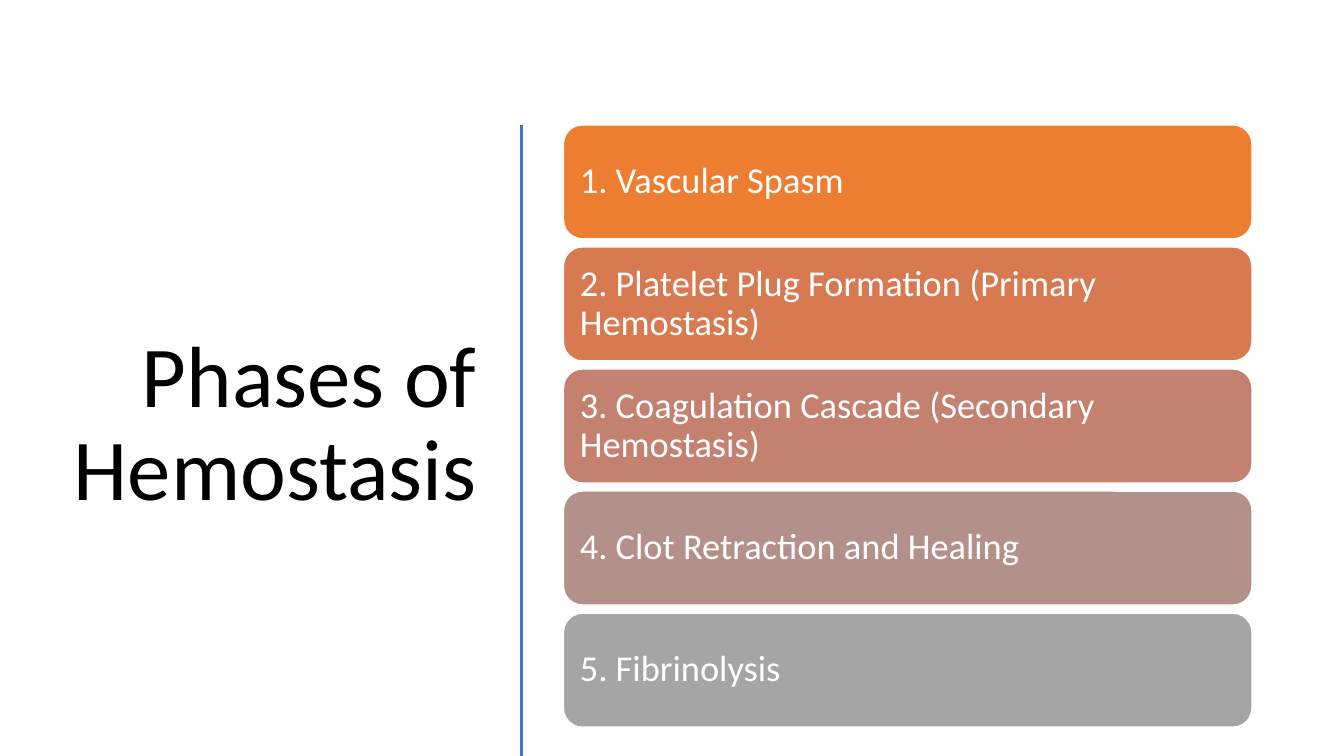
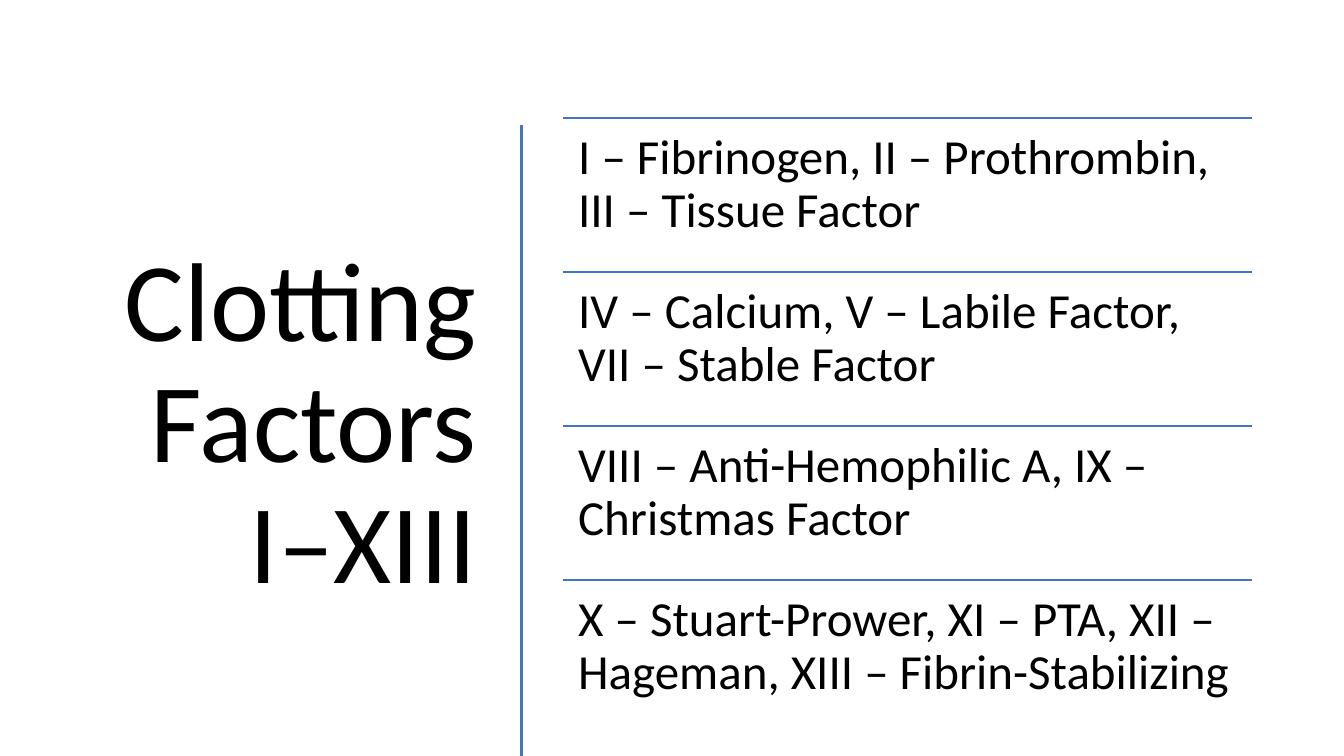
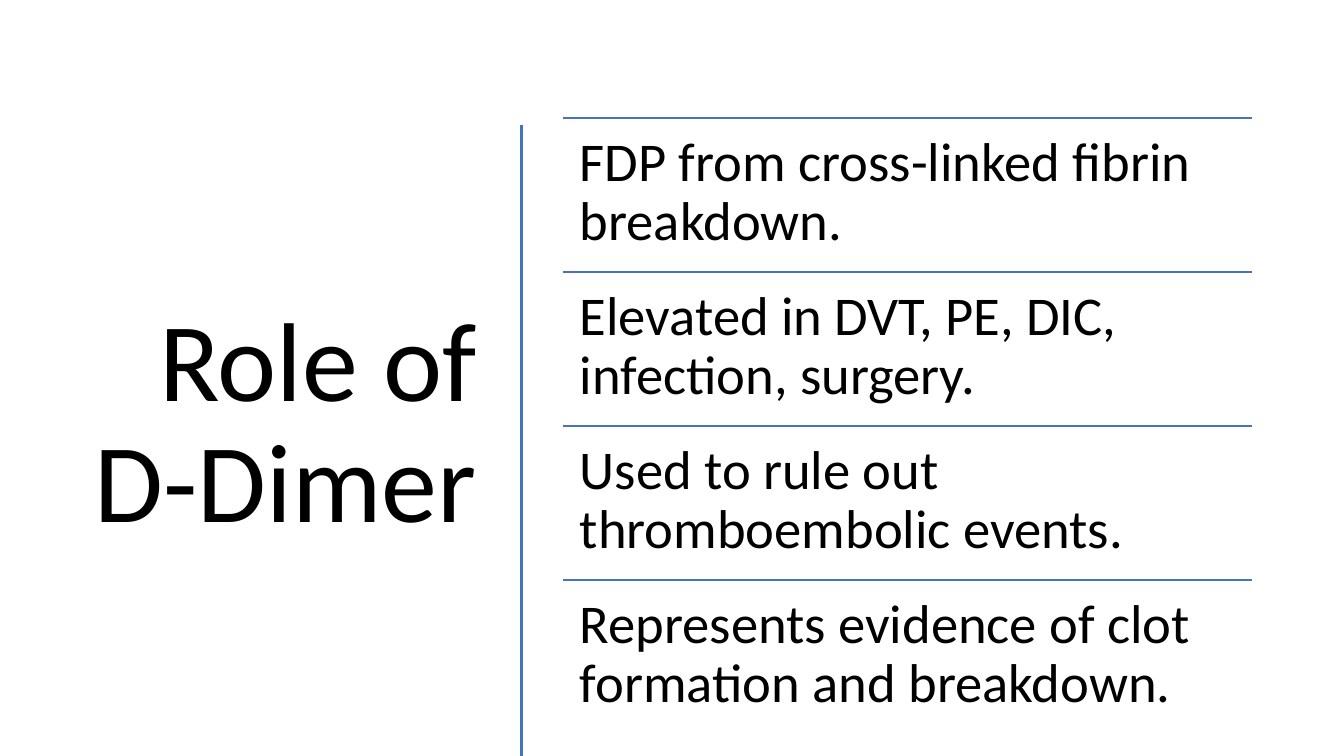
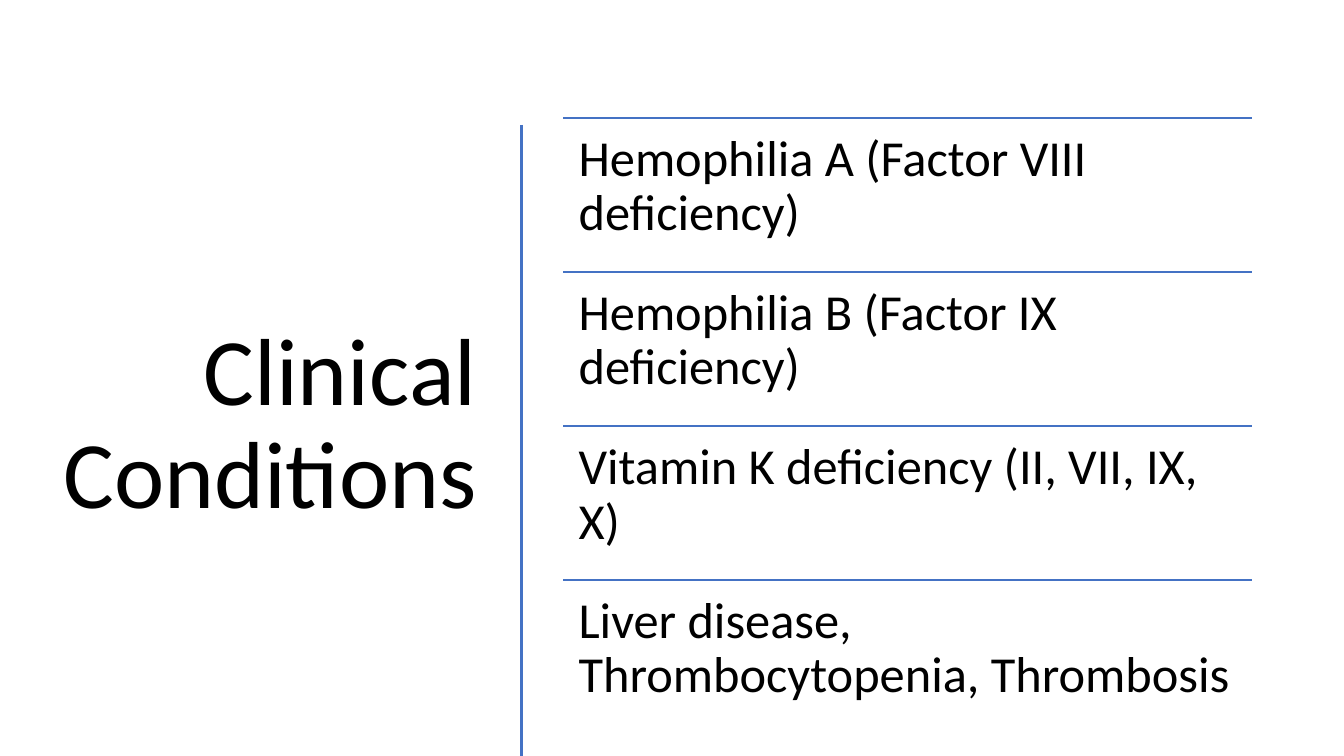
from pptx import Presentation
from pptx.dml.color import RGBColor
from pptx.enum.shapes import MSO_CONNECTOR, MSO_SHAPE
from pptx.enum.text import MSO_ANCHOR, PP_ALIGN
from pptx.oxml.xmlchemy import OxmlElement
from pptx.util import Pt

LINE, CARD = MSO_CONNECTOR.STRAIGHT, MSO_SHAPE.ROUNDED_RECTANGLE
TOP, MID = MSO_ANCHOR.TOP, MSO_ANCHOR.MIDDLE
LEFT, RIGHT = PP_ALIGN.LEFT, PP_ALIGN.RIGHT

BLACK = RGBColor(0x00, 0x00, 0x00)
WHITE = RGBColor(0xFF, 0xFF, 0xFF)
BLUE = RGBColor(0x44, 0x72, 0xC4)
FADE = [RGBColor.from_string(c) for c in
        ("ED7D31", "D87A51", "C48170", "B4908B", "A5A5A5")]

# Content: title, title size, item style, item size, items
SLIDES = [
    ("Phases of Hemostasis", 62, "cards", 26, [
        "1. Vascular Spasm",
        "2. Platelet Plug Formation (Primary Hemostasis)",
        "3. Coagulation Cascade (Secondary Hemostasis)",
        "4. Clot Retraction and Healing",
        "5. Fibrinolysis"]),
    ("Clotting Factors I–XIII", 80, "rows", 35, [
        "I – Fibrinogen, II – Prothrombin, III – Tissue Factor",
        "IV – Calcium, V – Labile Factor, VII – Stable Factor",
        "VIII – Anti-Hemophilic A, IX – Christmas Factor",
        "X – Stuart-Prower, XI – PTA, XII – Hageman, XIII – Fibrin-Stabilizing"]),
    ("Role of D-Dimer", 80, "rows", 39, [
        "FDP from cross-linked fibrin breakdown.",
        "Elevated in DVT, PE, DIC, infection, surgery.",
        "Used to rule out thromboembolic events.",
        "Represents evidence of clot formation and breakdown."]),
    ("Clinical Conditions", 68, "rows", 36, [
        "Hemophilia A (Factor VIII deficiency)",
        "Hemophilia B (Factor IX deficiency)",
        "Vitamin K deficiency (II, VII, IX, X)",
        "Liver disease, Thrombocytopenia, Thrombosis"]),
]

# Layout, in points
WIDE, HIGH = 960, 540
TITLE = (37.4, 84.2, 310.3, 440)
RULE_X, RULE_Y = 372.3, 89.2
LIST_X, LIST_W = 402.5, 491.8
ROW_Y, ROW_H = 84.2, 110
CARD_Y, CARD_H, CARD_GAP = 89.2, 81.4, 5.8
INSET = 0.3  # share of the text size


def put(shape, text, size, color, align, anchor, pad):
    frame = shape.text_frame
    look = {"word_wrap": True, "vertical_anchor": anchor,
            "margin_left": Pt(pad[0]), "margin_right": Pt(pad[0]),
            "margin_top": Pt(pad[1]), "margin_bottom": Pt(pad[1])}
    for name, value in look.items():
        setattr(frame, name, value)
    para = frame.paragraphs[0]
    para.text, para.alignment, para.line_spacing = text, align, 0.9
    for name, value in {"name": "Calibri", "size": Pt(size)}.items():
        setattr(para.font, name, value)
    para.font.color.rgb = color


def box(slide, area):
    return slide.shapes.add_textbox(*map(Pt, area))


def rule(slide, ends, width):
    line = slide.shapes.add_connector(LINE, *map(Pt, ends))
    line.line.color.rgb, line.line.width = BLUE, Pt(width)
    line._element.spPr.append(OxmlElement("a:effectLst"))


def cards(slide, items, size):
    for i, text in enumerate(items):
        y = CARD_Y + i * (CARD_H + CARD_GAP)
        card = slide.shapes.add_shape(
            CARD, *map(Pt, (LIST_X, y, LIST_W, CARD_H)))
        card.shadow.inherit = False
        card.fill.solid()
        card.fill.fore_color.rgb = FADE[i]
        card.line.color.rgb, card.line.width = WHITE, Pt(1)
        put(card, text, size, WHITE, LEFT, MID, (size * INSET, size * INSET))


def rows(slide, items, size):
    for i, text in enumerate(items):
        y = ROW_Y + i * ROW_H
        rule(slide, (LIST_X, y, LIST_X + LIST_W, y), 1)
        put(box(slide, (LIST_X, y, LIST_W, ROW_H)), text, size,
            BLACK, LEFT, TOP, (size * INSET, size * INSET))


def main():
    deck = Presentation()
    deck.slide_width, deck.slide_height = Pt(WIDE), Pt(HIGH)
    draw = {"cards": cards, "rows": rows}
    for title, big, kind, size, items in SLIDES:
        slide = deck.slides.add_slide(deck.slide_layouts[6])
        # Title and divider
        put(box(slide, TITLE), title, big, BLACK, RIGHT, MID, (7.2, 3.6))
        rule(slide, (RULE_X, RULE_Y, RULE_X, HIGH), 2)
        # List
        draw[kind](slide, items, size)
    deck.save("out.pptx")


if __name__ == "__main__":
    main()
